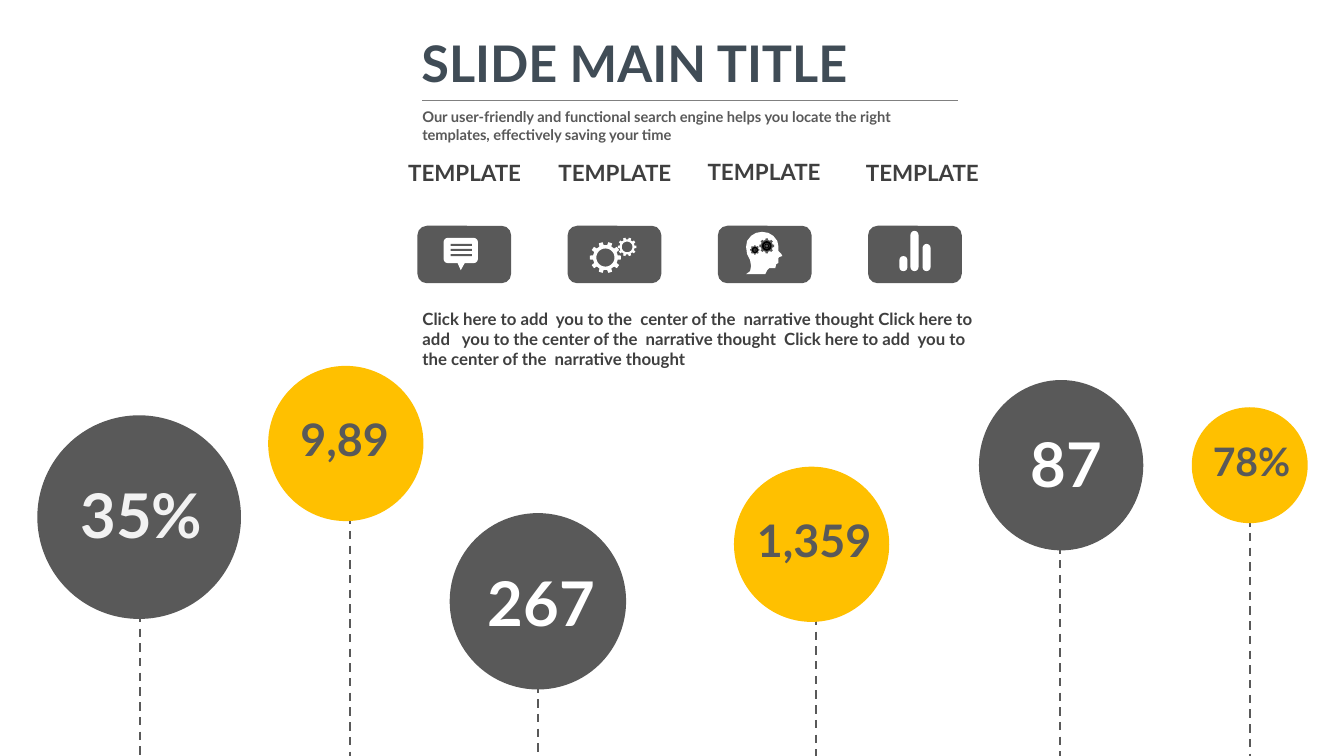
from dataclasses import dataclass
from math import cos, pi, sin

from lxml import etree
from pptx import Presentation
from pptx import util as u
from pptx.dml.color import RGBColor
from pptx.enum import dml, shapes, text
from pptx.oxml.ns import qn

# The slide is a grid of 1333 columns by 750 rows; every length is in cells.
CELL = u.Inches(0.01)
COLUMNS, ROWS = 1333, 750
FONT = "Lato"
GREY, YELLOW, WHITE, BLACK = "595959", "FFC000", "FFFFFF", "000000"
DARK, SLATE, RULE_GREY, PALE = "3F3F3F", "404C56", "808080", "F2F2F2"

Point = tuple[float, float]
Box = tuple[float, float, float, float]


@dataclass
class Balloon:
    label: str
    circle: Box
    stem: float
    label_box: Box
    size: int
    fill: str
    color: str


@dataclass
class Heading:
    left: float
    top: float


BALLOONS = [
    Balloon("35%", (37, 412, 202, 202), 139, (70, 468, 163, 84), 44, GREY, PALE),
    Balloon("1,359", (728, 463, 154, 154), 809, (741, 504, 147, 64), 32, YELLOW, GREY),
    Balloon("267", (446, 509, 175, 175), 534, (474, 556, 144, 84), 44, GREY, WHITE),
    Balloon("78%", (1182, 404, 115, 115), 1240, (1193, 429, 111, 57), 28, YELLOW, GREY),
    Balloon("87", (971, 377, 163, 169), 1051, (1012, 418, 102, 84), 44, GREY, WHITE),
    Balloon("9,89", (266, 363, 154, 154), 347, (288, 404, 125, 64), 32, YELLOW, GREY),
]
HEADINGS = [Heading(395, 153), Heading(544, 153), Heading(692, 152), Heading(849, 153)]
TILE_LEFT, TILE_TOP, TILE_STEP = 414, 224, 149
BODY_LINES = [
    "Click here to add  you to the  center of the  narrative thought Click here to",
    "add   you to the center of the  narrative thought  Click here to add  you to",
    "the center of the  narrative thought",
]
HEAD = [
    (775, 252), (772, 249), (772, 244), (771, 239), (767, 234), (762, 231), (756, 230),
    (750, 231), (745, 234), (741, 239), (740, 245), (741, 252), (744, 258), (745, 264),
    (744, 269), (740, 272), (759, 272), (761, 268), (763, 266), (769, 266), (770, 262),
    (772, 261), (772, 256), (773, 255), (776, 254),
]

presentation = Presentation()
presentation.slide_width = COLUMNS * CELL
presentation.slide_height = ROWS * CELL
slide = presentation.slides.add_slide(presentation.slide_layouts[1])


def cells(*lengths: float) -> list[u.Emu]:
    return [u.Emu(round(length * CELL)) for length in lengths]


def rgb(color: str) -> RGBColor:
    return RGBColor.from_string(color)


def paint(shape, color: str) -> None:
    shape.shadow.inherit = False
    shape.fill.solid()
    shape.fill.fore_color.rgb = rgb(color)
    shape.line.fill.background()


def draw_shape(kind: shapes.MSO_SHAPE, box: Box, color: str, *adjustments: float):
    shape = slide.shapes.add_shape(kind, *cells(*box))
    paint(shape, color)
    for index, value in enumerate(adjustments):
        shape.adjustments[index] = value
    return shape


def draw_outline(contours: list[list[Point]], color: str) -> None:
    """Fill the first contour; any further ones become holes in it."""
    first, *holes = [[cells(*point) for point in contour] for contour in contours]
    builder = slide.shapes.build_freeform(*first[0])
    builder.add_line_segments(first[1:])
    for hole in holes:
        builder.move_to(*hole[0])
        builder.add_line_segments(hole[1:])
    paint(builder.convert_to_shape(), color)


def draw_line(start: Point, end: Point, color: str, width: float, dashed: bool = False) -> None:
    line = slide.shapes.add_connector(
        shapes.MSO_CONNECTOR.STRAIGHT, *cells(*start, *end))
    line.line.color.rgb = rgb(color)
    line.line.width = u.Pt(width)
    if dashed:
        line.line.dash_style = dml.MSO_LINE.DASH
    etree.SubElement(line._element.spPr, qn("a:effectLst"))


def write(shape, box: Box, lines: list[str], size: float, color: str) -> None:
    shape.left, shape.top, shape.width, shape.height = cells(*box)
    frame = shape.text_frame
    frame.text = "\n".join(lines)
    frame.word_wrap = True
    frame.auto_size = text.MSO_AUTO_SIZE.NONE
    frame.vertical_anchor = text.MSO_ANCHOR.TOP
    for paragraph in frame.paragraphs:
        paragraph.alignment = text.PP_ALIGN.LEFT
        paragraph.space_before = u.Pt(0)
        paragraph.font.name = FONT
        paragraph.font.size = u.Pt(size)
        paragraph.font.bold = True
        paragraph.font.color.rgb = rgb(color)


def add_text(box: Box, words: str, size: float, color: str) -> None:
    write(slide.shapes.add_textbox(*cells(*box)), box, [words], size, color)


def remove_bullets(shape) -> None:
    for paragraph in shape.text_frame.paragraphs:
        properties = paragraph._p.get_or_add_pPr()
        properties.set("marL", "0")
        properties.set("indent", "0")
        bullet = etree.Element(qn("a:buNone"))
        properties.find(qn("a:defRPr")).addprevious(bullet)


def ring(center: Point, radius: float, angles: list[float]) -> list[Point]:
    return [(center[0] + radius * cos(a), center[1] + radius * sin(a)) for a in angles]


def draw_gear(center: Point, radius: float, teeth: int, hole: float, color: str) -> None:
    step = 2 * pi / teeth
    outline = []
    for tooth in range(teeth):
        middle = tooth * step
        for share, reach in ((-0.28, 0.8), (-0.2, 1), (0.2, 1), (0.28, 0.8)):
            outline += ring(center, radius * reach, [middle + share * step])
    contours = [outline]
    if hole:
        contours.append(ring(center, hole, [i * pi / 18 for i in range(36)]))
    draw_outline(contours, color)


def draw_chat() -> None:
    draw_shape(shapes.MSO_SHAPE.ROUNDED_RECTANGLE, (440, 236, 34, 25), WHITE, 0.16)
    draw_outline([[(453, 259), (462, 259), (457, 268)]], WHITE)
    for row in range(3):
        draw_shape(shapes.MSO_SHAPE.RECTANGLE, (447, 242 + 5 * row, 21, 2), GREY)


def draw_gears() -> None:
    draw_gear((600.5, 255.5), 15.5, 10, 9, WHITE)
    draw_gear((622, 245), 9.3, 10, 5.3, WHITE)


def draw_head() -> None:
    draw_outline([HEAD], WHITE)
    for x, y, radius in ((748.7, 248, 4.7), (760.5, 244, 7.5)):
        draw_gear((x, y), radius, 8, 0, GREY)
        for share in (0.64, 0.32):
            reach = radius * share
            box = (x - reach, y - reach, 2 * reach, 2 * reach)
            draw_shape(shapes.MSO_SHAPE.DONUT, box, BLACK, 0.2)


def draw_bars() -> None:
    for left, height in ((892, 15), (903, 40), (915, 27)):
        box = (left, 269 - height, 8, height)
        draw_shape(shapes.MSO_SHAPE.ROUNDED_RECTANGLE, box, WHITE, 0.5)


def draw_balloon(balloon: Balloon) -> None:
    left, top, width, height = balloon.circle
    draw_line((balloon.stem, top + height - 5), (balloon.stem, ROWS), GREY, 1.5, dashed=True)
    draw_shape(shapes.MSO_SHAPE.OVAL, balloon.circle, balloon.fill)
    add_text(balloon.label_box, balloon.label, balloon.size, balloon.color)


title, body = slide.placeholders
write(title, (408, 27, 553, 71), ["SLIDE MAIN TITLE"], 36, SLATE)
write(body, (409, 301, 603, 75), BODY_LINES, 12, DARK)
remove_bullets(body)
add_text((409, 102, 551, 47),
         "Our user-friendly and functional search engine helps you locate the right "
         "templates, effectively saving your time", 10.5, GREY)
for rule_row, rule_color in ((100, RULE_GREY), (101, WHITE)):
    draw_line((419, rule_row), (950, rule_row), rule_color, 1)

for column, (heading, draw_icon) in enumerate(
        zip(HEADINGS, (draw_chat, draw_gears, draw_head, draw_bars))):
    add_text((heading.left, heading.top, 160, 37), "TEMPLATE", 16, DARK)
    tile = (TILE_LEFT + column * TILE_STEP, TILE_TOP, 93, 57)
    draw_shape(shapes.MSO_SHAPE.ROUNDED_RECTANGLE, tile, GREY, 0.167)
    draw_icon()

for balloon in BALLOONS:
    draw_balloon(balloon)

presentation.save("out.pptx")
